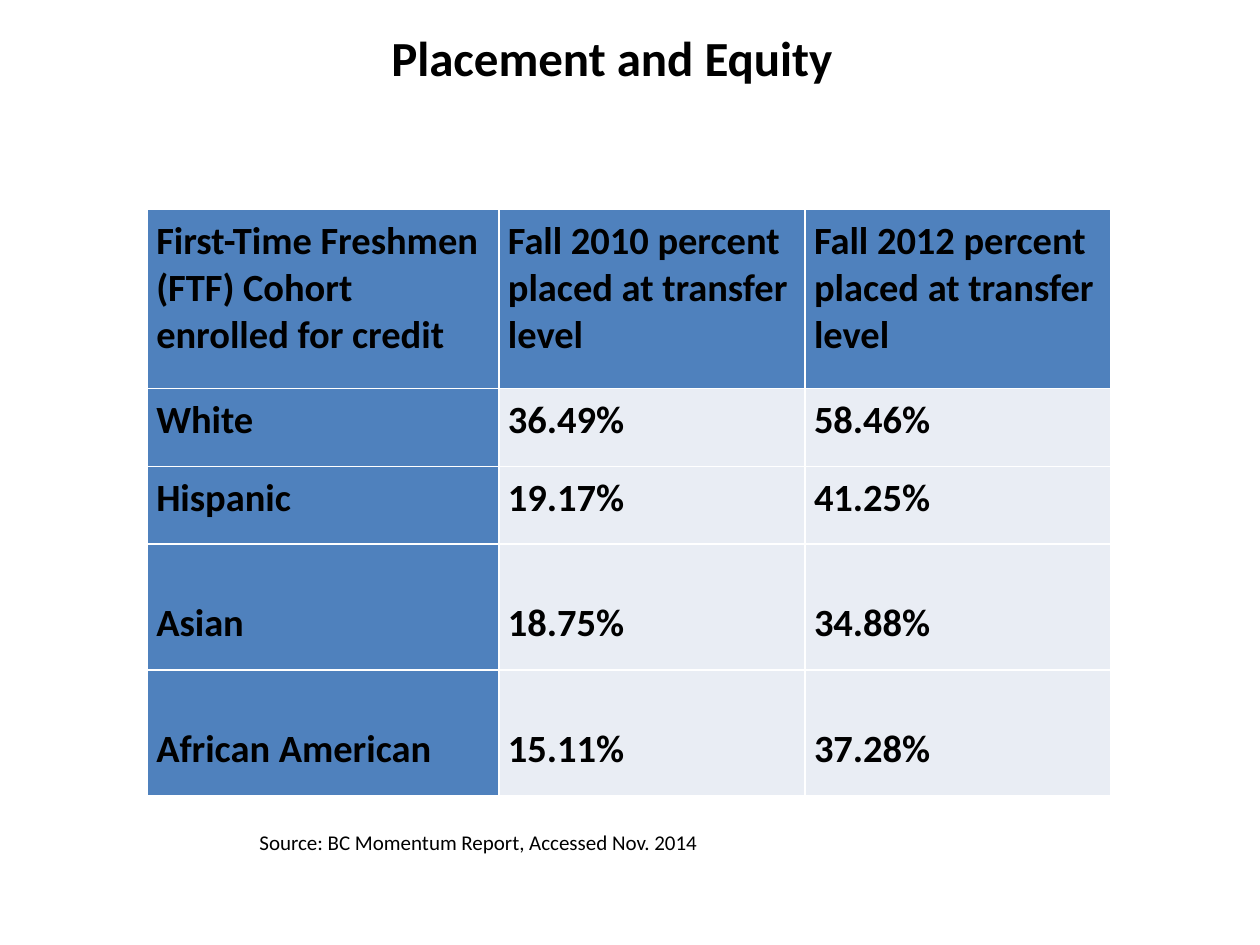
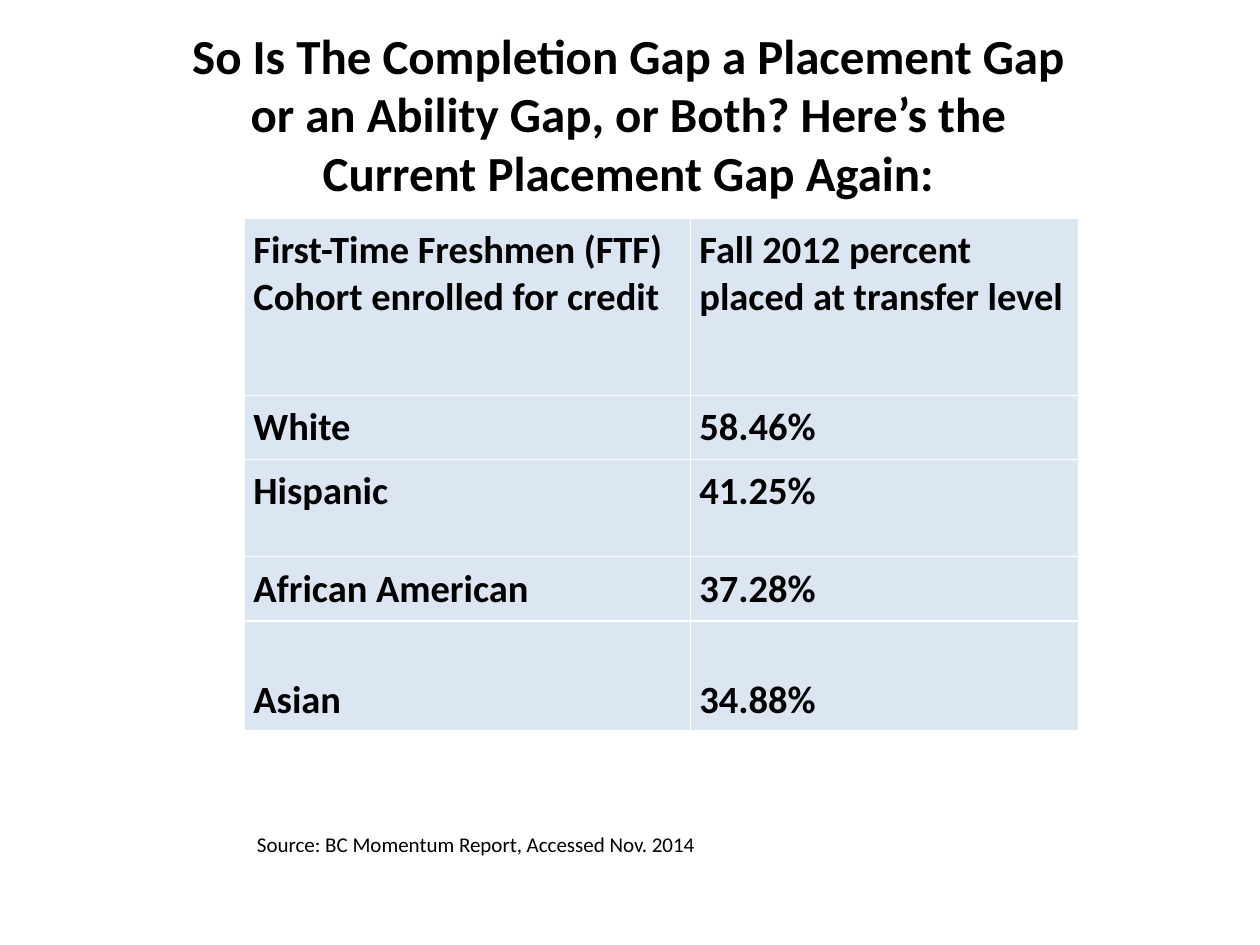
"""Builds two slides on placement rates by student group."""
from dataclasses import dataclass

from lxml.etree import SubElement
from pptx import Presentation
from pptx.dml.color import RGBColor as RGB
from pptx.enum.text import MSO_AUTO_SIZE as AutoSize, PP_ALIGN as Align
from pptx.oxml.ns import qn
from pptx.slide import Slide
from pptx.table import _Cell as Cell
from pptx.text.text import _Paragraph as Paragraph
from pptx.util import Cm, Pt

COLORS = {"text": "000000", "border": "FFFFFF", "accent": "4F81BD",
          "body": "E9EDF4", "plain": "DCE6F2"}
FONT = "Calibri"
COHORT = "First-Time Freshmen (FTF) Cohort enrolled for credit"
FALL_2010, FALL_2012 = (f"Fall {year} percent placed at transfer level" for year in (2010, 2012))
SOURCE = "Source: BC Momentum Report, Accessed Nov. 2014"


@dataclass(frozen=True)
class Label:
    text: str
    left: float
    top: float
    width: float
    height: float
    size: int
    bold: bool = False
    align: Align = Align.LEFT


@dataclass(frozen=True)
class Row:
    height: float
    texts: tuple[str, ...]
    spacing: float = 1.0


@dataclass(frozen=True)
class Grid:
    left: float
    top: float
    widths: tuple[float, ...]
    rows: tuple[Row, ...]
    heading_fill: str
    body_fill: str


@dataclass(frozen=True)
class Page:
    title: Label
    grid: Grid
    source: Label


def title(text: str, left: float, top: float, height: float) -> Label:
    return Label(text, left, top, 18.21, height, 28, True, Align.CENTER)


def source(left: float, top: float) -> Label:
    return Label(SOURCE, left, top, 16.08, 0.76, 12)


PAGES = (
    Page(
        title("Placement and Equity", 3.23, 0.43, 1.45),
        Grid(2.97, 4.22, (7.09, 6.17, 6.17), (
            Row(3.61, (COHORT, FALL_2010, FALL_2012)),
            Row(1.57, ("White", "36.49%", "58.46%")),
            Row(1.57, ("Hispanic", "19.17%", "41.25%")),
            Row(2.54, ("Asian", "18.75%", "34.88%"), 2.0),
            Row(2.54, ("African American", "15.11%", "37.28%"), 2.0),
        ), "accent", "body"),
        source(4.98, 16.59),
    ),
    Page(
        title("So Is The Completion Gap a Placement Gap or an Ability Gap, or Both? "
              "Here’s the Current Placement Gap Again:", 3.56, 0.38, 3.84),
        Grid(4.93, 4.39, (8.99, 7.82), (
            Row(3.58, (COHORT, FALL_2012)),
            Row(1.19, ("White", "58.46%")),
            Row(1.96, ("Hispanic", "41.25%")),
            Row(1.19, ("African American", "37.28%")),
            Row(1.98, ("Asian", "34.88%"), 2.0),
        ), "plain", "plain"),
        source(4.93, 16.64),
    ),
)


def add_run(p: Paragraph, text: str, size: int, bold: bool) -> None:
    r = p.add_run()
    r.text = text
    r.font.name, r.font.size, r.font.bold = FONT, Pt(size), bold
    r.font.color.rgb = RGB.from_string(COLORS["text"])


def add_label(s: Slide, label: Label) -> None:
    sp = s.shapes.add_textbox(Cm(label.left), Cm(label.top), Cm(label.width), Cm(label.height))
    tf = sp.text_frame
    tf.word_wrap = True
    tf.auto_size = AutoSize.SHAPE_TO_FIT_TEXT
    p = tf.paragraphs[0]
    p.alignment = label.align
    add_run(p, label.text, label.size, label.bold)


def add_borders(cell: Cell) -> None:
    props = cell._tc.get_or_add_tcPr()
    for side in ("L", "R", "T", "B"):
        line = SubElement(props, qn(f"a:ln{side}"), w=str(Pt(1)))
        fill = SubElement(line, qn("a:solidFill"))
        SubElement(fill, qn("a:srgbClr"), val=COLORS["border"])


def fill_cell(cell: Cell, text: str, spacing: float, color: str) -> None:
    cell.margin_left = cell.margin_right = cell.margin_top = cell.margin_bottom = Cm(0.18)
    add_borders(cell)
    cell.fill.solid()
    cell.fill.fore_color.rgb = RGB.from_string(COLORS[color])
    p = cell.text_frame.paragraphs[0]
    p.line_spacing = spacing
    add_run(p, text, 22, True)


def add_grid(s: Slide, grid: Grid) -> None:
    height = sum(row.height for row in grid.rows)
    table = s.shapes.add_table(len(grid.rows), len(grid.widths), Cm(grid.left), Cm(grid.top),
                               Cm(sum(grid.widths)), Cm(height)).table
    for column, width in zip(table.columns, grid.widths):
        column.width = Cm(width)
    for i, row in enumerate(grid.rows):
        table.rows[i].height = Cm(row.height)
        for j, text in enumerate(row.texts):
            color = grid.body_fill if i and j else grid.heading_fill
            fill_cell(table.cell(i, j), text, row.spacing, color)


def main() -> None:
    prs = Presentation()
    prs.slide_width, prs.slide_height = Cm(25.4), Cm(19.05)
    for page in PAGES:
        s = prs.slides.add_slide(prs.slide_layouts[6])
        add_label(s, page.title)
        add_grid(s, page.grid)
        add_label(s, page.source)
    prs.save("out.pptx")


if __name__ == "__main__":
    main()
